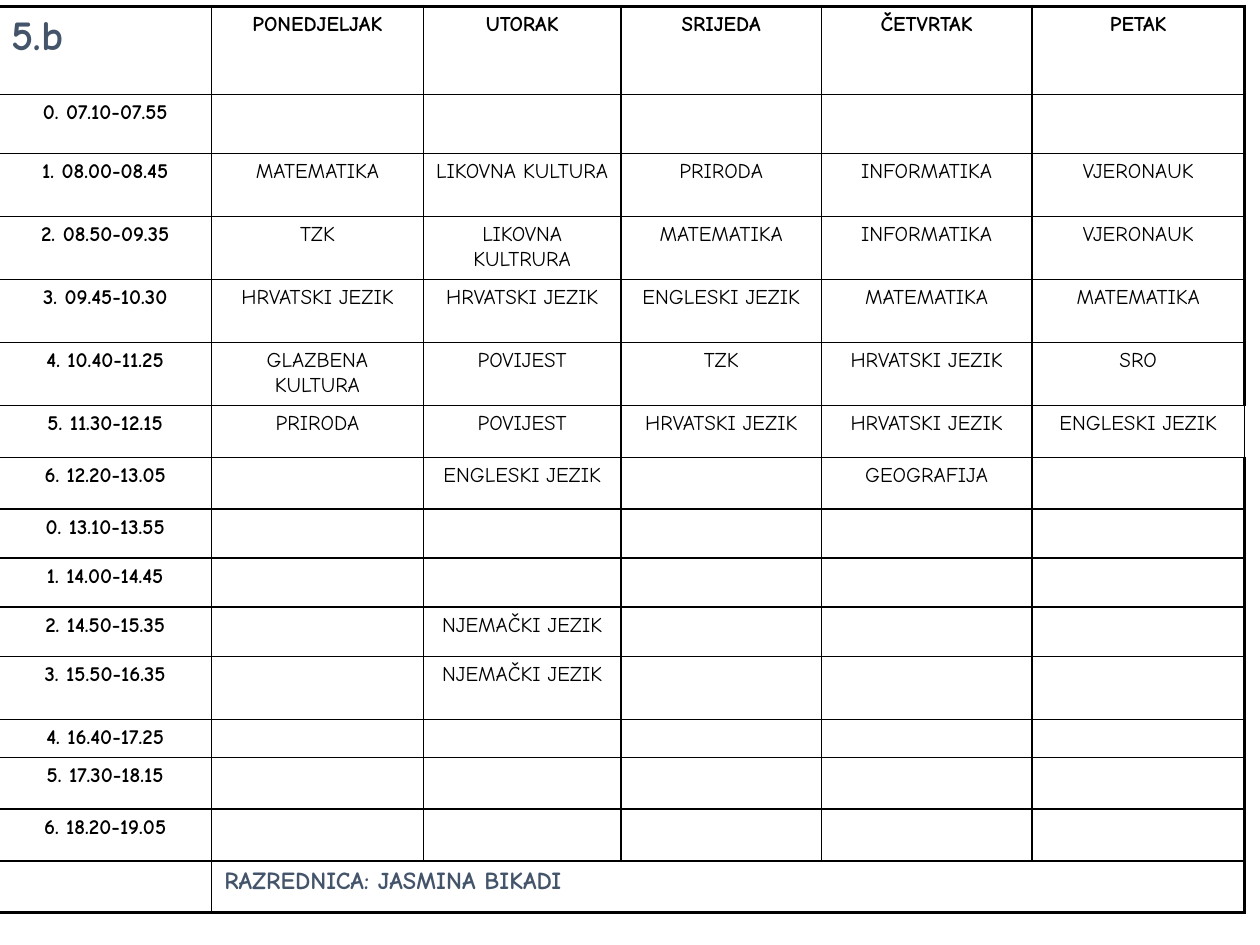
from lxml import etree
from pptx import Presentation
from pptx.dml.color import RGBColor
from pptx.enum.text import PP_ALIGN
from pptx.oxml.ns import qn
from pptx.util import Inches, Pt

CENTER, LEFT = PP_ALIGN.CENTER, PP_ALIGN.LEFT
FONT = "Comic Neue"
COLORS = {"ink": "000000", "accent": "44546A", "paper": "FFFFFF"}
THIN, THICK = 1, 2.25

COLUMN_WIDTHS = [1.69, 1.68, 1.57, 1.59, 1.67, 1.69]
ROW_HEIGHTS = [0.7, 0.47] + [0.5] * 4 + [0.41] * 2 + [0.39] * 3 + [0.5, 0.29] + [0.41] * 3

CLASS_NAME = "5.b"
CLASS_TEACHER = "RAZREDNICA: JASMINA BIKADI"
DAYS = ["PONEDJELJAK", "UTORAK", "SRIJEDA", "ČETVRTAK", "PETAK"]
FREE = [""] * 5
LESSONS = [
    ("0. 07.10-07.55", FREE),
    ("1. 08.00-08.45", ["MATEMATIKA", "LIKOVNA KULTURA", "PRIRODA", "INFORMATIKA", "VJERONAUK"]),
    ("2. 08.50-09.35", ["TZK", "LIKOVNA KULTRURA", "MATEMATIKA", "INFORMATIKA", "VJERONAUK"]),
    ("3. 09.45-10.30", ["HRVATSKI JEZIK", "HRVATSKI JEZIK", "ENGLESKI JEZIK", "MATEMATIKA", "MATEMATIKA"]),
    ("4. 10.40-11.25", ["GLAZBENA KULTURA", "POVIJEST", "TZK", "HRVATSKI JEZIK", "SRO"]),
    ("5. 11.30-12.15", ["PRIRODA", "POVIJEST", "HRVATSKI JEZIK", "HRVATSKI JEZIK", "ENGLESKI JEZIK"]),
    ("6. 12.20-13.05", ["", "ENGLESKI JEZIK", "", "GEOGRAFIJA", ""]),
    ("0. 13.10-13.55", FREE),
    ("1. 14.00-14.45", FREE),
    ("2. 14.50-15.35", ["", "NJEMAČKI JEZIK", "", "", ""]),
    ("3. 15.50-16.35", ["", "NJEMAČKI JEZIK", "", "", ""]),
    ("4. 16.40-17.25", FREE),
    ("5. 17.30-18.15", FREE),
    ("6. 18.20-19.05", FREE),
]
THIN_EDGE_ROW = 6  # the only row whose right edge is thin


def write_cell(cell, text, size=12, color="ink", bold=True, align=CENTER):
    paragraph = cell.text_frame.paragraphs[0]
    paragraph.text = text
    paragraph.alignment = align
    for run in paragraph.runs:
        run.font.name = FONT
        run.font.size = Pt(size)
        run.font.bold = bold
        run.font.color.rgb = RGBColor.from_string(COLORS[color])
    if not text:
        # An empty cell needs its own size so that it does not stretch its row.
        etree.SubElement(paragraph._p, qn("a:endParaRPr"), sz=str(size * 100))


def draw_borders(cell, widths):
    """Draw the left, right, top and bottom borders with widths in points."""
    properties = cell._tc.get_or_add_tcPr()
    for side, width in zip("LRTB", widths):
        line = etree.SubElement(properties, qn(f"a:ln{side}"), w=str(int(Pt(width))))
        fill = etree.SubElement(line, qn("a:solidFill"))
        etree.SubElement(fill, qn("a:srgbClr"), val=COLORS["ink"])


def style_grid(table):
    last_row, last_column = len(ROW_HEIGHTS) - 1, len(COLUMN_WIDTHS) - 1
    for row in range(last_row + 1):
        for column in range(last_column + 1):
            cell = table.cell(row, column)
            outer = (
                column == 0,
                column == last_column and row != THIN_EDGE_ROW,
                row == 0,
                row == last_row,
            )
            draw_borders(cell, [THICK if edge else THIN for edge in outer])
            cell.fill.solid()
            cell.fill.fore_color.rgb = RGBColor.from_string(COLORS["paper"])


def add_timetable(slide):
    table = slide.shapes.add_table(
        len(ROW_HEIGHTS), len(COLUMN_WIDTHS), Inches(-0.01), Inches(0.05),
        Inches(sum(COLUMN_WIDTHS)), Inches(sum(ROW_HEIGHTS)),
    ).table
    table.first_row = False
    table.horz_banding = False
    for column, width in zip(table.columns, COLUMN_WIDTHS):
        column.width = Inches(width)
    for row, height in zip(table.rows, ROW_HEIGHTS):
        row.height = Inches(height)
    style_grid(table)
    return table


def fill_timetable(table):
    write_cell(table.cell(0, 0), CLASS_NAME, 24, "accent", align=LEFT)
    for column, day in enumerate(DAYS, start=1):
        write_cell(table.cell(0, column), day)

    for row, (period, subjects) in enumerate(LESSONS, start=1):
        write_cell(table.cell(row, 0), period)
        for column, subject in enumerate(subjects, start=1):
            write_cell(table.cell(row, column), subject, bold=False)

    footer_row = len(LESSONS) + 1
    write_cell(table.cell(footer_row, 0), "")
    teacher = table.cell(footer_row, 1)
    teacher.merge(table.cell(footer_row, len(DAYS)))
    # The merged cell spans to the outer edge of the grid.
    teacher._tc.tcPr.find(qn("a:lnR")).set("w", str(int(Pt(THICK))))
    write_cell(teacher, CLASS_TEACHER, 14, "accent", align=LEFT)


def main():
    presentation = Presentation()
    presentation.slide_width = Inches(10)
    presentation.slide_height = Inches(7.5)
    slide = presentation.slides.add_slide(presentation.slide_layouts[6])
    fill_timetable(add_timetable(slide))
    presentation.save("out.pptx")


if __name__ == "__main__":
    main()
